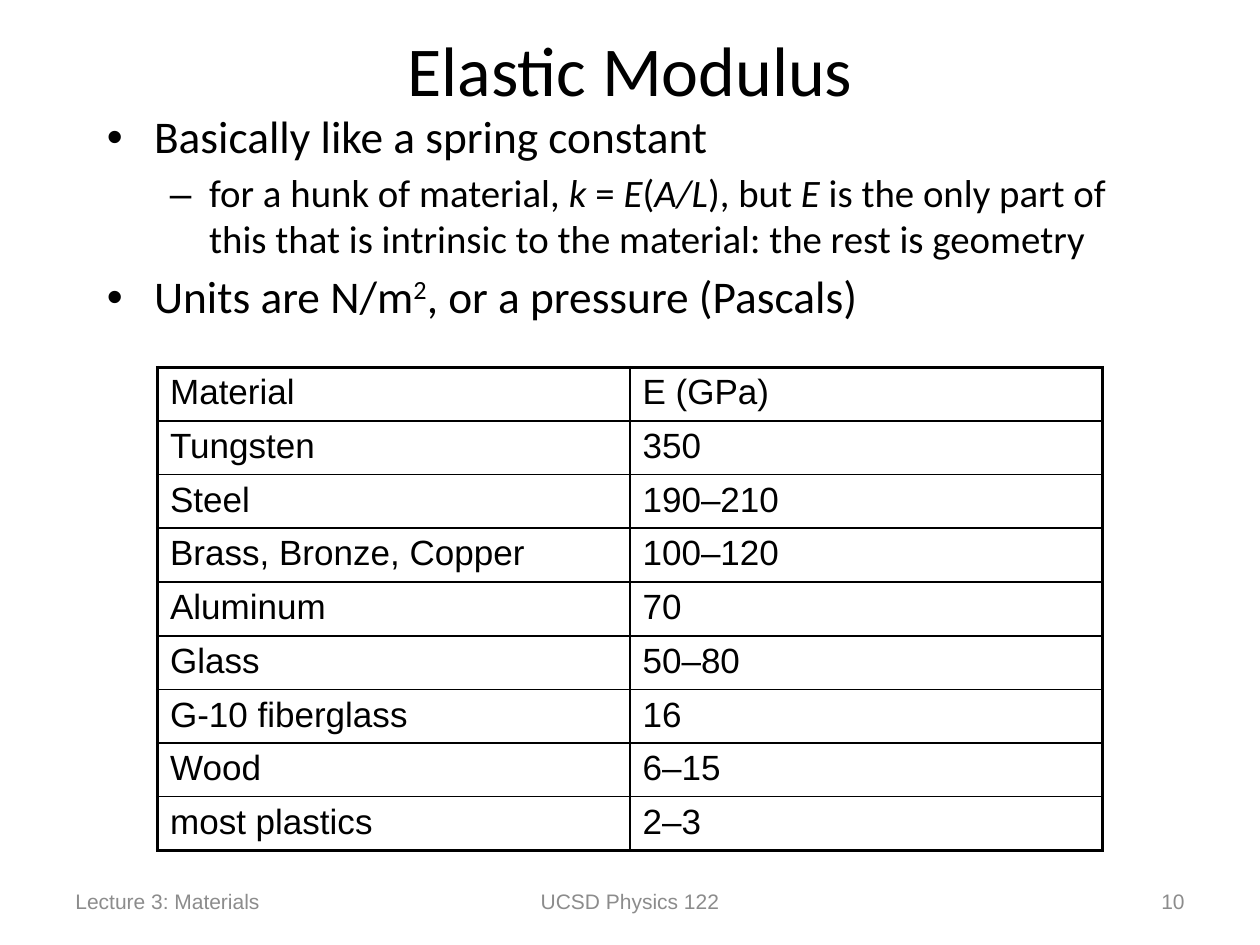
"""Build the Elastic Modulus slide with its bullets, table and footer."""
import pptx
import pptx.dml.color
import pptx.enum.text
import pptx.oxml
import pptx.oxml.ns
import pptx.util

Pt = pptx.util.Pt
ALIGN = pptx.enum.text.PP_ALIGN
ANCHOR = pptx.enum.text.MSO_ANCHOR
NAMESPACE = pptx.oxml.ns.nsdecls("a")


def color(value):
    return pptx.dml.color.RGBColor.from_string(value)


def write(para, text, size=12, font="Arial", ink="000000", align=ALIGN.LEFT, italic=False, raised=False):
    para.alignment = align
    span = para.add_run()
    span.text = text
    span.font.size = Pt(size)
    span.font.name = font
    span.font.italic = italic
    span.font.color.rgb = color(ink)
    if raised:
        span.font._element.set("baseline", "30000")


deck = pptx.Presentation()
deck.slide_width, deck.slide_height = Pt(720), Pt(540)
page = deck.slides.add_slide(deck.slide_layouts[5])

title = page.shapes.title
title.left, title.top, title.width, title.height = Pt(54), Pt(-6), Pt(612), Pt(90)
title.text_frame.vertical_anchor = ANCHOR.MIDDLE
write(title.text_frame.paragraphs[0], "Elastic Modulus", size=40, font="Calibri", align=ALIGN.CENTER)

bullets = [
    (0, [("Basically like a spring constant", "")]),
    (1, [
        ("for a hunk of material, ", ""), ("k", "italic"), (" = ", ""), ("E", "italic"), ("(", ""),
        ("A/L", "italic"), ("), but ", ""), ("E", "italic"),
        (" is the only part of this that is intrinsic to the material: the rest is geometry", ""),
    ]),
    (0, [("Units are N/m", ""), ("2", "raised"), (", or a pressure (Pascals)", "")]),
]
levels = [("•", 25.9, 27, 27), ("–", 22.2, 58.5, 22.5)]
body = page.shapes.add_textbox(Pt(54), Pt(60), Pt(612), Pt(150)).text_frame
body.word_wrap = True
for index, (level, spans) in enumerate(bullets):
    mark, size, margin, hang = levels[level]
    para = body.add_paragraph() if index else body.paragraphs[0]
    para.level = level
    para.line_spacing = 0.97
    para.space_before = Pt(0.2 * size if index else 2)
    properties = para._p.get_or_add_pPr()
    properties.set("marL", str(Pt(margin)))
    properties.set("indent", str(-Pt(hang)))
    properties.append(pptx.oxml.parse_xml(f'<a:buFont {NAMESPACE} typeface="Arial"/>'))
    properties.append(pptx.oxml.parse_xml(f'<a:buChar {NAMESPACE} char="{mark}"/>'))
    for text, style in spans:
        write(para, text, size=size, font="Calibri", italic=style == "italic", raised=style == "raised")

materials = [
    ("Material", "E (GPa)"),
    ("Tungsten", "350"),
    ("Steel", "190–210"),
    ("Brass, Bronze, Copper", "100–120"),
    ("Aluminum", "70"),
    ("Glass", "50–80"),
    ("G-10 fiberglass", "16"),
    ("Wood", "6–15"),
    ("most plastics", "2–3"),
]
last = len(materials) - 1
table = page.shapes.add_table(len(materials), 2, Pt(90), Pt(210), Pt(540), Pt(268)).table
table.first_row = table.horz_banding = False
for column in table.columns:
    column.width = Pt(270)
for row, values in enumerate(materials):
    table.rows[row].height = Pt(31 if values[0] == "Aluminum" else 29.6)
    for column, text in enumerate(values):
        cell = table.cell(row, column)
        cell.margin_top = cell.margin_bottom = Pt(3.3)
        write(cell.text_frame.paragraphs[0], text, size=20)
        properties = cell._tc.get_or_add_tcPr()
        outer = {"lnL": column == 0, "lnR": column == 1, "lnT": row == 0, "lnB": row == last}
        for edge, thick in outer.items():
            properties.append(pptx.oxml.parse_xml(
                f'<a:{edge} {NAMESPACE} w="{Pt(2.25 if thick else 1)}">'
                f'<a:solidFill><a:srgbClr val="000000"/></a:solidFill></a:{edge}>'))
        cell.fill.background()

footers = [
    (36, 168, "Lecture 3: Materials", ALIGN.LEFT),
    (246, 228, "UCSD Physics 122", ALIGN.CENTER),
    (516, 168, "10", ALIGN.RIGHT),
]
for left, width, text, align in footers:
    box = page.shapes.add_textbox(Pt(left), Pt(500.5), Pt(width), Pt(28.75)).text_frame
    box.word_wrap = True
    box.vertical_anchor = ANCHOR.MIDDLE
    write(box.paragraphs[0], text, ink="8C8C8C", align=align)

deck.save("out.pptx")
